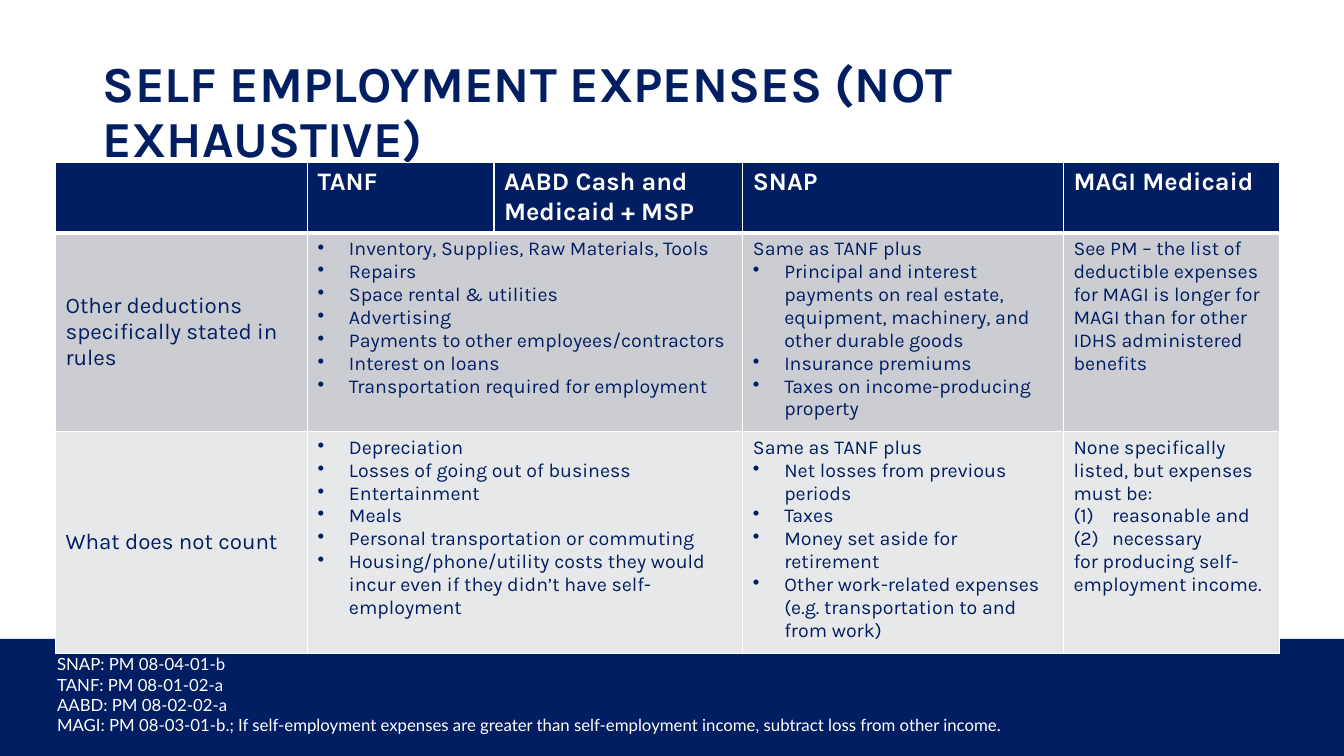
from lxml.etree import SubElement
from pptx import Presentation
from pptx.dml.color import RGBColor
from pptx.enum.shapes import MSO_SHAPE
from pptx.enum.text import MSO_ANCHOR, MSO_AUTO_SIZE, PP_ALIGN
from pptx.oxml.ns import qn
from pptx.util import Cm, Pt

NAVY, WHITE = "001E61", "FFFFFF"
FILLS = [NAVY, "CCCDD2", "E7E8EA"]
WIDTHS = [6.35, 4.7, 6.27, 8.08, 5.44]
HEIGHTS = [1.6, 4.47, 5.08]
FONTS = {
    "title": {"name": "Karla", "size": Pt(36), "bold": True},
    "head": {"name": "Karla", "size": Pt(18), "bold": True},
    "side": {"name": "Karla", "size": Pt(16), "bold": False},
    "body": {"name": "Karla", "size": Pt(14), "bold": False},
    "foot": {"name": "Lato", "size": Pt(12), "bold": False},
}
MARKS = {
    "dot": (0.79, "buChar", {"char": "•"}),
    "num": (0.97, "buAutoNum", {"type": "arabicParenBoth"}),
}


def plain(*lines):
    return [(None, line) for line in lines]


def dots(*lines):
    return [("dot", line) for line in lines]


def nums(*lines):
    return [("num", line) for line in lines]


ROWS = [
    [[], plain("TANF"), plain("AABD Cash and Medicaid + MSP"), plain("SNAP"),
     plain("MAGI Medicaid")],
    [plain("Other deductions specifically stated in rules"),
     dots("Inventory, Supplies, Raw Materials, Tools", "Repairs",
          "Space rental & utilities", "Advertising",
          "Payments to other employees/contractors", "Interest on loans",
          "Transportation required for employment"),
     [],
     plain("Same as TANF plus")
     + dots("Principal and interest payments on real estate, equipment, "
            "machinery, and other durable goods",
            "Insurance premiums", "Taxes on income-producing property"),
     plain("See PM – the list of deductible expenses for MAGI is longer for "
           "MAGI than for other IDHS administered benefits")],
    [plain("What does not count"),
     dots("Depreciation", "Losses of going out of business", "Entertainment",
          "Meals", "Personal transportation or commuting",
          "Housing/phone/utility costs they would incur even if they didn’t "
          "have self-employment"),
     [],
     plain("Same as TANF plus")
     + dots("Net losses from previous periods", "Taxes",
            "Money set aside for retirement",
            "Other work-related expenses (e.g. transportation to and from work)"),
     plain("None specifically listed, but expenses must be:")
     + nums("reasonable and", "necessary")
     + plain("for producing self-employment income.")],
]
NOTES = plain(
    "SNAP: PM 08-04-01-b", "TANF: PM 08-01-02-a", "AABD: PM 08-02-02-a",
    "MAGI: PM 08-03-01-b.; If self-employment expenses are greater than "
    "self-employment income, subtract loss from other income.")


def color(code):
    return RGBColor.from_string(code)


def paint(shape, code):
    shape.fill.solid()
    shape.fill.fore_color.rgb = color(code)


def write(frame, lines, kind, code):
    for i, (mark, text) in enumerate(lines):
        para = frame.add_paragraph() if i else frame.paragraphs[0]
        if mark:
            dent, tag, attrs = MARKS[mark]
            props = para._p.get_or_add_pPr()
            props.set("marL", str(Cm(dent)))
            props.set("indent", str(-Cm(dent)))
            SubElement(props, qn("a:" + tag), attrs)
        run = para.add_run()
        run.text = text
        for key, val in FONTS[kind].items():
            setattr(run.font, key, val)
        run.font.color.rgb = color(code)


def edge(cell, row):
    props = cell._tc.get_or_add_tcPr()
    thick = {0: "lnB", 1: "lnT"}.get(row)
    for side in ("lnL", "lnR", "lnT", "lnB"):
        width = Pt(3 if side == thick else 1)
        line = SubElement(props, qn("a:" + side), {"w": str(width)})
        fill = SubElement(line, qn("a:solidFill"))
        SubElement(fill, qn("a:srgbClr"), {"val": WHITE})


def place(shape, box):
    for key, val in zip(("left", "top", "width", "height"), box):
        setattr(shape, key, Cm(val))


def header(slide, box):
    title = slide.shapes.title
    place(title, box)
    frame = title.text_frame
    form = {"auto_size": MSO_AUTO_SIZE.NONE, "word_wrap": True,
            "vertical_anchor": MSO_ANCHOR.MIDDLE}
    for key, val in form.items():
        setattr(frame, key, val)
    write(frame, plain("SELF EMPLOYMENT EXPENSES (NOT EXHAUSTIVE)"), "title", NAVY)
    for key, val in {"alignment": PP_ALIGN.LEFT, "line_spacing": 0.9}.items():
        setattr(frame.paragraphs[0], key, val)


def rules(slide, left, top):
    table = slide.shapes.add_table(
        len(ROWS), len(WIDTHS), Cm(left), Cm(top),
        Cm(sum(WIDTHS)), Cm(sum(HEIGHTS))).table
    for col, width in zip(table.columns, WIDTHS):
        col.width = Cm(width)
    for r, (row, height) in enumerate(zip(ROWS, HEIGHTS)):
        table.rows[r].height = Cm(height)
        for c, lines in enumerate(row):
            cell = table.cell(r, c)
            edge(cell, r)
            paint(cell, FILLS[r])
            kind = "head" if r == 0 else "body" if c else "side"
            write(cell.text_frame, lines, kind, NAVY if r else WHITE)
            if kind == "side":
                cell.vertical_anchor = MSO_ANCHOR.MIDDLE
        if r:
            table.cell(r, 1).merge(table.cell(r, 2))


def footer(slide, box):
    left, top, width, height = box
    band = slide.shapes.add_shape(MSO_SHAPE.RECTANGLE, *map(Cm, box))
    band.shadow.inherit = False
    paint(band, NAVY)
    band.line.fill.background()
    text = slide.shapes.add_textbox(
        Cm(left + 1.19), Cm(top + 0.26), Cm(25.07), Cm(height - 0.64))
    text.text_frame.word_wrap = True
    write(text.text_frame, NOTES, "foot", WHITE)


def main():
    deck = Presentation()
    deck.slide_width, deck.slide_height = Cm(33.87), Cm(19.05)
    slide = deck.slides.add_slide(deck.slide_layouts[5])
    footer(slide, (0, 16.1, 33.87, 2.95))
    header(slide, (2.34, 1.02, 29.21, 3.68))
    rules(slide, 1.4, 4.09)
    deck.save("out.pptx")


if __name__ == "__main__":
    main()
